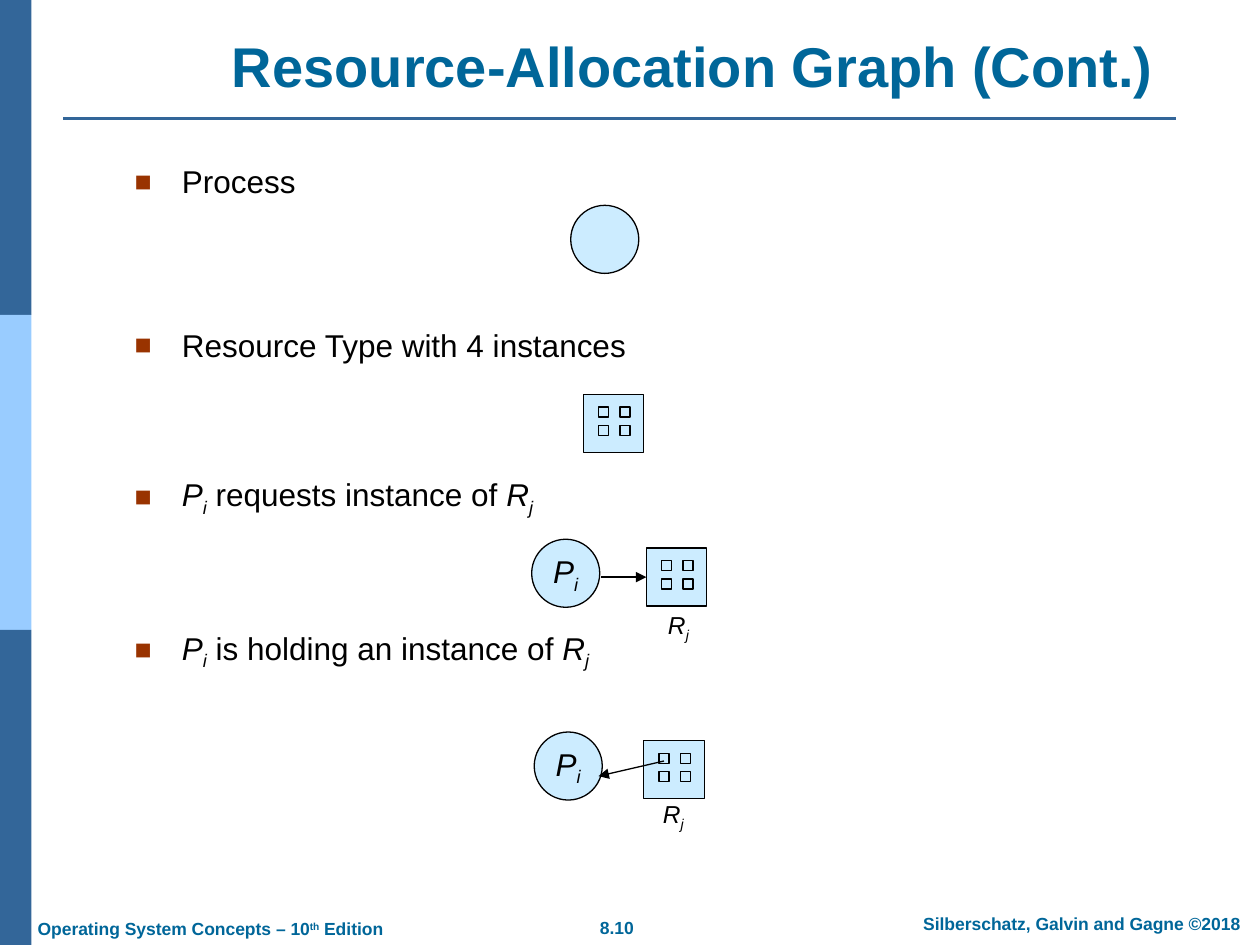
import pptx
import pptx.util
import pptx.dml.color
import pptx.enum.shapes
import pptx.enum.text
import pptx.oxml
import pptx.oxml.ns
import lxml.etree

COLORS = {"title": "006699", "rail": "336699", "band": "99CCFF",
          "node": "CCECFF", "bullet": "993300", "ink": "000000"}
RGB = {k: pptx.dml.color.RGBColor.from_string(v) for k, v in COLORS.items()}
SHAPE = pptx.enum.shapes.MSO_SHAPE
ANCHOR = pptx.enum.text.MSO_ANCHOR
ALIGN = pptx.enum.text.PP_ALIGN
BASELINE = {"sub": "-25000", "sup": "30000"}

prs = pptx.Presentation()
prs.slide_width = pptx.util.Inches(10)
prs.slide_height = pptx.util.Inches(7.5)
s = prs.slides.add_slide(prs.slide_layouts[6])
COL = prs.slide_width / 100
ROW = prs.slide_height / 75


def at(*cells):
    return [pptx.util.Emu(round(c * (ROW if i % 2 else COL))) for i, c in enumerate(cells)]


def write(p, runs, **fmt):
    for text, style in runs:
        r = p.add_run()
        r.text = text
        look = {"name": "Arial", "italic": "italic" in style, **fmt}
        r.font.color.rgb = RGB[look.pop("color", "ink")]
        for key, value in look.items():
            setattr(r.font, key, value)
        for word in style.split():
            if word in BASELINE:
                r._r.get_or_add_rPr().set("baseline", BASELINE[word])


P_I = [("P", "italic"), ("i", "italic sub")]
R_J = [("R", "italic"), ("j", "italic sub")]

for i, color in enumerate(["rail", "band", "rail"]):
    sp = s.shapes.add_shape(SHAPE.RECTANGLE, *at(0, 25 * i, 2.5, 25))
    sp.shadow.inherit = False
    sp.fill.solid()
    sp.fill.fore_color.rgb = RGB[color]
    sp.line.fill.background()

heading = {"color": "title", "bold": True}
labels = [
    ((12.3, 2, 85.4, 6.3), [("Resource-Allocation Graph (Cont.)", "")],
     32, ALIGN.CENTER, ANCHOR.BOTTOM, True, heading),
    ((46.5, 72.3, 4.9, 2.7), [("8.10", "")], 10, ALIGN.CENTER, ANCHOR.TOP, False, heading),
    ((71, 72, 29.7, 2.7), [("Silberschatz, Galvin and Gagne ©2018", "")],
     10, ALIGN.CENTER, ANCHOR.TOP, True, heading),
    ((2, 72.4, 29.9, 2.7),
     [("Operating System Concepts – 10", ""), ("th", "sup"), (" Edition", "")],
     10, ALIGN.LEFT, ANCHOR.TOP, False, heading),
    ((52, 48.1, 3.7, 3.3), R_J, 14, ALIGN.CENTER, ANCHOR.MIDDLE, False, {}),
    ((51.6, 63.1, 3.7, 3.3), R_J, 14, ALIGN.CENTER, ANCHOR.MIDDLE, False, {}),
]
for cells, runs, size, align, anchor, wrap, fmt in labels:
    tf = s.shapes.add_textbox(*at(*cells)).text_frame
    tf.word_wrap = wrap
    tf.vertical_anchor = anchor
    p = tf.paragraphs[0]
    p.alignment = align
    write(p, runs, size=pptx.util.Pt(size), **fmt)

tf = s.shapes.add_textbox(*at(9.7, 12.4, 80.3, 49.5)).text_frame
tf.word_wrap = True
items = [
    (0, [("Process", "")]),
    (72, [("Resource Type with 4 instances", "")]),
    (63.3, P_I + [(" requests instance of ", "")] + R_J),
    (63.3, P_I + [(" is holding an instance of ", "")] + R_J),
]
for i, (gap, runs) in enumerate(items):
    p = tf.add_paragraph() if i else tf.paragraphs[0]
    pPr = p._p.get_or_add_pPr()
    indent = at(3.75)[0]
    pPr.set("marL", str(indent))
    pPr.set("indent", str(-indent))
    clr = lxml.etree.SubElement(pPr, pptx.oxml.ns.qn("a:buClr"))
    lxml.etree.SubElement(clr, pptx.oxml.ns.qn("a:srgbClr"), val=COLORS["bullet"])
    lxml.etree.SubElement(pPr, pptx.oxml.ns.qn("a:buSzPct"), val="90000")
    lxml.etree.SubElement(pPr, pptx.oxml.ns.qn("a:buFont"), typeface="Arial")
    lxml.etree.SubElement(pPr, pptx.oxml.ns.qn("a:buChar"), char="■")
    if gap:
        p.space_before = pptx.util.Pt(gap)
    write(p, runs, size=pptx.util.Pt(18))

nodes = []
for x, y, runs in [(45.3, 16.3, []), (42.2, 42.8, P_I), (42.4, 58.1, P_I)]:
    sp = s.shapes.add_shape(SHAPE.OVAL, *at(x, y, 5.4, 5.4))
    sp.text_frame.word_wrap = False
    sp.text_frame.vertical_anchor = ANCHOR.MIDDLE
    p = sp.text_frame.paragraphs[0]
    p.alignment = ALIGN.CENTER
    write(p, runs, size=pptx.util.Pt(18))
    nodes.append(sp)

resources = []
for x, y in [(46.3, 31.3), (51.3, 43.5), (51.1, 58.8)]:
    group = s.shapes.add_group_shape()
    resources.append(group.shapes.add_shape(SHAPE.RECTANGLE, *at(x, y, 4.8, 4.6)))
    nodes.append(resources[-1])
    for i in range(4):
        cell = at(x + 1.2 + 1.7 * (i % 2), y + 1 + 1.45 * (i // 2), 0.8, 0.8)
        nodes.append(group.shapes.add_shape(SHAPE.RECTANGLE, *cell))

for sp in nodes:
    sp.shadow.inherit = False
    sp.fill.solid()
    sp.fill.fore_color.rgb = RGB["node"]
    sp.line.color.rgb = RGB["ink"]
    sp.line.width = pptx.util.Pt(0.75)

lines = [((5, 9.4, 93.3, 9.4), "rail", 1.5, False, None),
         ((47.7, 45.8, 51.3, 45.8), "ink", 0.75, True, resources[1]),
         ((52.7, 60.4, 47.5, 61.6), "ink", 0.75, True, None)]
for ends, color, width, arrow, target in lines:
    c = s.shapes.add_connector(pptx.enum.shapes.MSO_CONNECTOR.STRAIGHT, *at(*ends))
    c.line.color.rgb = RGB[color]
    c.line.width = pptx.util.Pt(width)
    if target is not None:
        c.end_connect(target, 1)
    if arrow:
        lxml.etree.SubElement(c.line._get_or_add_ln(), pptx.oxml.ns.qn("a:tailEnd"), type="triangle")
    lxml.etree.SubElement(c._element.spPr, pptx.oxml.ns.qn("a:effectLst"))

prs.save("out.pptx")
